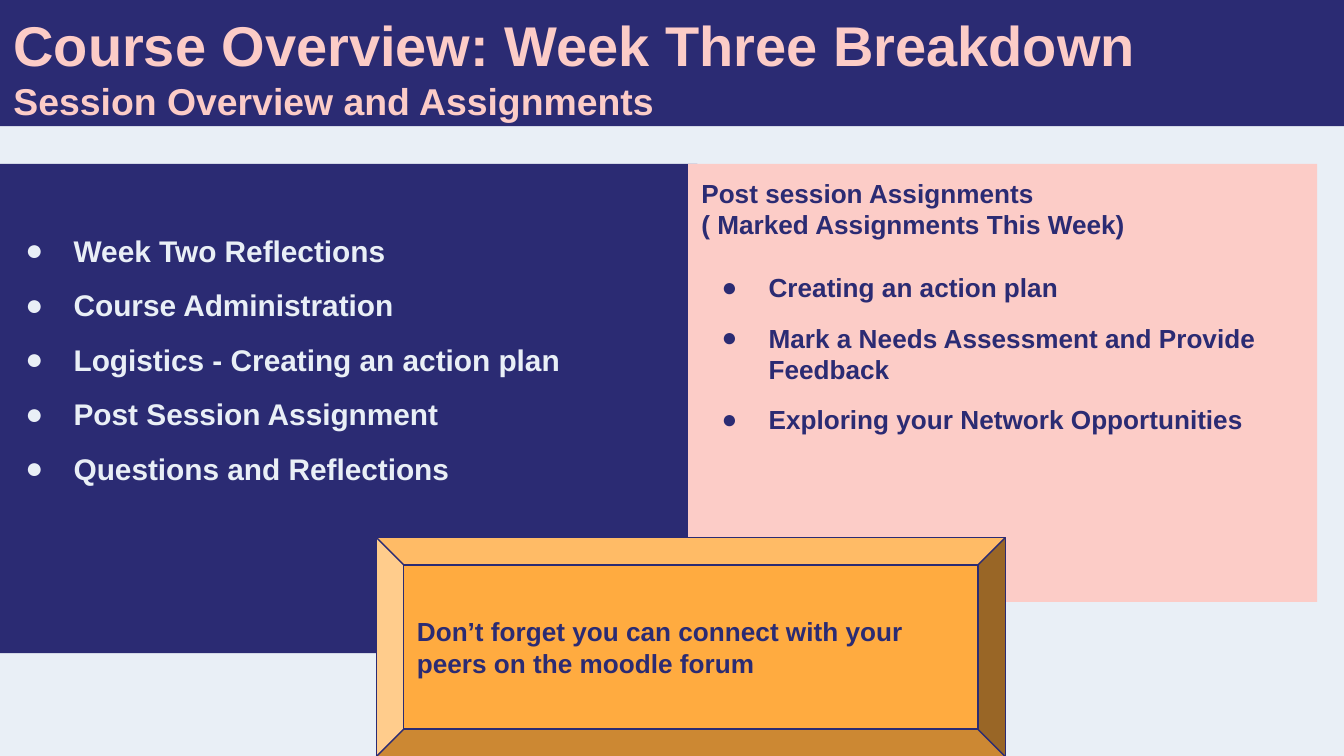
"""Builds the week three course overview slide."""
import pptx
import pptx.util
import pptx.dml.color
import pptx.enum.shapes
import pptx.enum.text
import pptx.oxml
import pptx.oxml.ns

Inches, Pt = pptx.util.Inches, pptx.util.Pt
SHAPES = pptx.enum.shapes.MSO_SHAPE
ANCHOR = pptx.enum.text.MSO_ANCHOR
PAGE_WIDTH = 10
PAGE_HEIGHT = PAGE_WIDTH * 9 / 16
COLORS = {"navy": "2B2B73", "pink": "FCCCC7", "pale": "E9EFF6", "orange": "FFAB40"}

TITLE = {
    "place": (0, -0.02, PAGE_WIDTH, 0.96), "fill": "navy", "color": "pink",
    "lines": [("Course Overview: Week Three Breakdown", 30, 0, False),
              ("Session Overview and Assignments", 20, 0, False)],
}
AGENDA = ["Week Two Reflections", "Course Administration",
          "Logistics - Creating an action plan", "Post Session Assignment",
          "Questions and Reflections"]
HEADINGS = ["Post session Assignments", "( Marked Assignments This Week)"]
ASSIGNMENTS = ["Creating an action plan", "Mark a Needs Assessment and Provide Feedback",
               "Exploring your Network Opportunities"]
REMINDER = "Don’t forget you can connect with your peers on the moodle forum"

PANELS = [
    {"place": (-0.05, 1.22, 5.24, 3.64), "fill": "navy", "color": "pale", "top": 0.51,
     "lines": [(text, 16, 10 if index else 0, True) for index, text in enumerate(AGENDA)]},
    {"place": (5.12, 1.22, 4.68, 3.26), "fill": "pink", "color": "navy",
     "lines": [(text, 14, 0, False) for text in HEADINGS]
     + [(text, 14, 10 if index else 17, True) for index, text in enumerate(ASSIGNMENTS)]},
    {"place": (2.8, 4, 4.68, 1.63), "fill": "orange", "color": "navy", "line": "navy",
     "shape": SHAPES.BEVEL, "anchor": ANCHOR.MIDDLE, "lines": [(REMINDER, 14, 0, False)]},
]


def rgb(name):
    """Return the named colour."""
    return pptx.dml.color.RGBColor.from_string(COLORS[name])


def add_bullet(para, color, indent):
    """Give the paragraph a round bullet with a hanging indent."""
    properties = para._p.get_or_add_pPr()
    properties.set("marL", str(Inches(0.5)))
    properties.set("indent", str(-Inches(indent)))
    namespace = pptx.oxml.ns.nsdecls("a")
    for markup in (
        f'<a:buClr {namespace}><a:srgbClr val="{COLORS[color]}"/></a:buClr>',
        f'<a:buFont {namespace} typeface="Arial"/>',
        f'<a:buChar {namespace} char="●"/>',
    ):
        properties.append(pptx.oxml.parse_xml(markup))


def format_box(box, panel):
    """Place, colour and fill the box with its lines of text."""
    for name, value in zip(("left", "top", "width", "height"), panel["place"]):
        setattr(box, name, Inches(value))
    box.fill.solid()
    box.fill.fore_color.rgb = rgb(panel["fill"])
    if "line" in panel:
        box.line.color.rgb = rgb(panel["line"])
        box.line.width = Pt(0.75)
    else:
        box.line.fill.background()
    frame = box.text_frame
    settings = {
        "word_wrap": True, "auto_size": pptx.enum.text.MSO_AUTO_SIZE.NONE,
        "vertical_anchor": panel.get("anchor", ANCHOR.TOP),
        "margin_left": Inches(0.1), "margin_right": Inches(0.1),
        "margin_top": Inches(panel.get("top", 0.1)), "margin_bottom": Inches(0.1),
    }
    for name, value in settings.items():
        setattr(frame, name, value)
    for index, (text, size, before, bulleted) in enumerate(panel["lines"]):
        para = frame.add_paragraph() if index else frame.paragraphs[0]
        para.alignment = pptx.enum.text.PP_ALIGN.LEFT
        para.space_before = Pt(before)
        if bulleted:
            add_bullet(para, panel["color"], 0.36 if size == 16 else 0.35)
        span = para.add_run()
        span.text = text
        for font in (para.font, span.font):
            for name, value in {"name": "Arial", "size": Pt(size), "bold": True}.items():
                setattr(font, name, value)
            font.color.rgb = rgb(panel["color"])


def main():
    """Build and save the deck."""
    deck = pptx.Presentation()
    deck.slide_width, deck.slide_height = Inches(PAGE_WIDTH), Inches(PAGE_HEIGHT)
    page = deck.slides.add_slide(deck.slide_layouts[5])
    page.background.fill.solid()
    page.background.fill.fore_color.rgb = rgb("pale")
    format_box(page.shapes.title, TITLE)
    for panel in PANELS:
        kind = panel.get("shape", SHAPES.RECTANGLE)
        box = page.shapes.add_shape(kind, *map(Inches, panel["place"]))
        box.shadow.inherit = False
        format_box(box, panel)
    deck.save("out.pptx")


if __name__ == "__main__":
    main()
